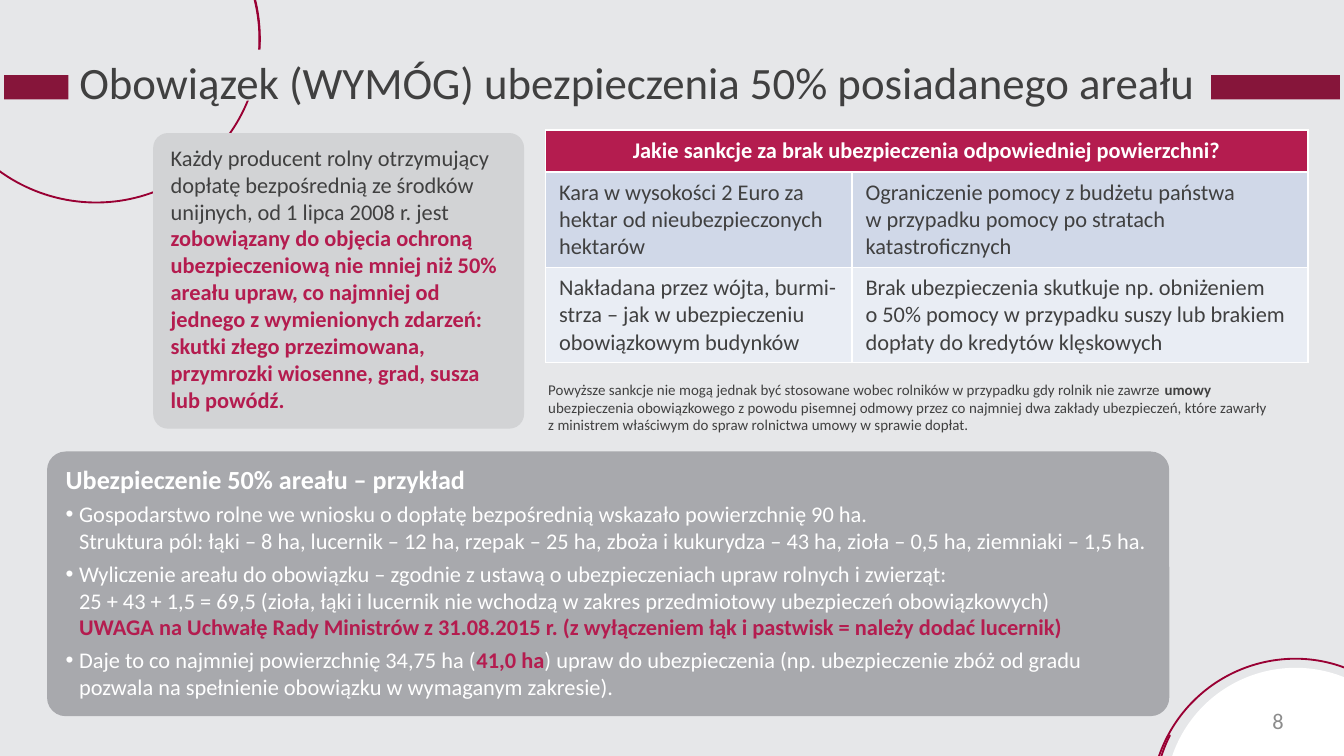
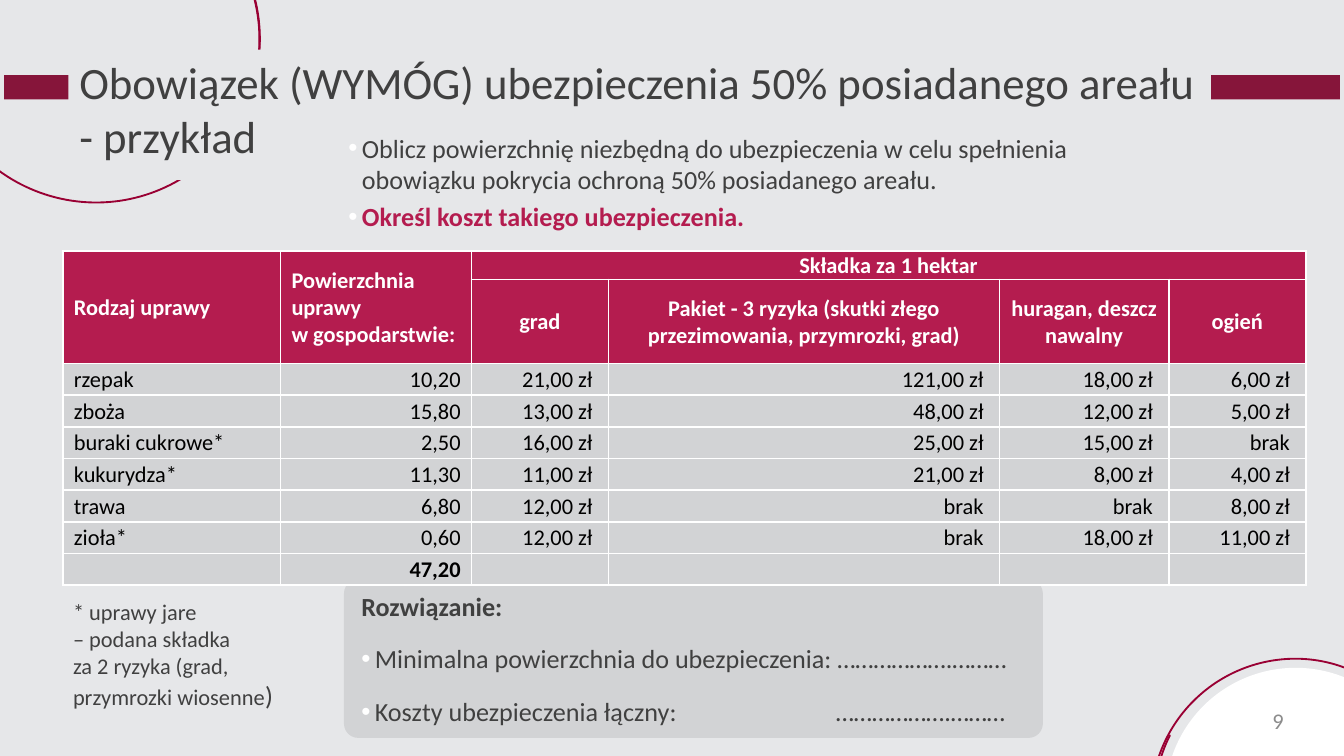
from copy import deepcopy
from dataclasses import dataclass

from lxml import etree
from pptx import Presentation
from pptx.dml.color import RGBColor
from pptx.enum.shapes import MSO_SHAPE
from pptx.enum.text import MSO_ANCHOR, MSO_AUTO_SIZE, PP_ALIGN
from pptx.oxml.ns import qn
from pptx.util import Pt

ARC, OVAL = MSO_SHAPE.BLOCK_ARC, MSO_SHAPE.OVAL
RECT, ROUND = MSO_SHAPE.RECTANGLE, MSO_SHAPE.ROUNDED_RECTANGLE
LEFT, MID, RIGHT = PP_ALIGN.LEFT, PP_ALIGN.CENTER, PP_ALIGN.RIGHT
TOP, CENTRE = MSO_ANCHOR.TOP, MSO_ANCHOR.MIDDLE
GROW = MSO_AUTO_SIZE.SHAPE_TO_FIT_TEXT

FONT = "Calibri"
PAPER, WHITE, BLACK = "E6E7E9", "FFFFFF", "000000"
WINE, RING, ROSE = "86153A", "990033", "B41C4F"
INK, PALE, GREY, DIM = "404040", "D2D3D5", "A8A9AD", "8C8C8C"
BLUE, ICE = "D0D8E8", "E9EDF4"
PAD = (7.2, 3.6, 7.2, 3.6)
TITLE = "Obowiązek (WYMÓG) ubezpieczenia 50% posiadanego areału"


@dataclass
class Bit:
    """A piece of text in one style; line breaks are newlines."""
    text: str
    size: float = 12
    color: str = INK
    bold: bool = False


@dataclass
class Para:
    bits: list
    dot: bool = False
    align: PP_ALIGN = LEFT
    before: float = 3
    lead: float = 1
    tab: float = 0


@dataclass
class Box:
    x: float
    y: float
    w: float
    h: float
    paras: list
    kind: MSO_SHAPE = ROUND
    fill: str = ""
    curve: float = 0.05
    pad: tuple = PAD
    anchor: MSO_ANCHOR = TOP
    grow: bool = False


@dataclass
class Deco:
    """A part of the shared backdrop; sweep is the arc's start in degrees."""
    kind: MSO_SHAPE
    x: float
    y: float
    w: float
    h: float
    fill: str = WINE
    turn: float = 0
    sweep: float = 0


@dataclass
class Cell:
    para: Para
    fill: str
    pad: tuple = PAD
    anchor: MSO_ANCHOR = TOP


DECOS = [
    Deco(ARC, -36.7, -67, 175.7, 176.4, turn=12.3, sweep=170.46),
    Deco(ARC, -36.7, -67.7, 175.7, 176.4, turn=132.3, sweep=155.79),
    Deco(RECT, 2.2, 40.3, 715.7, 13),
    Deco(ARC, 618.5, 354.2, 151.9, 148.3, turn=205.2, sweep=170.46),
    Deco(ARC, 616.3, 353.5, 151.9, 148.3, turn=325.2, sweep=163.48),
    Deco(OVAL, 624.2, 357.8, 139.7, 139.7, fill=WHITE, turn=7),
]


def rgb(code: str) -> RGBColor:
    return RGBColor.from_string(code)


def paint(fill, code: str) -> None:
    fill.solid()
    fill.fore_color.rgb = rgb(code)


def child(node, tag: str, **attrs):
    return etree.SubElement(node, qn(tag), attrs)


def tint(node, code: str) -> None:
    child(node, "a:srgbClr", val=code)


# Text

def style(font, bit: Bit) -> None:
    font.name, font.size, font.bold = FONT, Pt(bit.size), bit.bold
    font.color.rgb = rgb(bit.color)


def write(par, spec: Para) -> None:
    par.alignment = spec.align
    par.space_before = Pt(spec.before)
    par.line_spacing = spec.lead
    for bit in spec.bits:
        for num, line in enumerate(bit.text.split("\n")):
            if num:
                par.add_line_break()
                mark = par._p.findall(qn("a:br"))[-1]
                mark.append(deepcopy(par.runs[-1]._r.rPr))
            if line:
                run = par.add_run()
                run.text = line
                style(run.font, bit)
    props = par._p.get_or_add_pPr()
    if not par.runs:
        child(par._p, "a:endParaRPr", sz="1200")
    if spec.dot:
        props.set("marL", str(Pt(7.2)))
        props.set("indent", str(Pt(-7.2)))
        tint(child(props, "a:buClr"), WHITE)
        child(props, "a:buFont", typeface="Arial")
        child(props, "a:buChar", char="•")
    if spec.tab:
        tabs = child(props, "a:tabLst")
        child(tabs, "a:tab", pos=str(Pt(spec.tab)), algn="l")


def margins(item, pad: tuple) -> None:
    (item.margin_left, item.margin_top,
     item.margin_right, item.margin_bottom) = map(Pt, pad)


# Shapes

def place(slide, item):
    spot = map(Pt, (item.x, item.y, item.w, item.h))
    shape = slide.shapes.add_shape(item.kind, *spot)
    shape.shadow.inherit = False
    shape.line.fill.background()
    if item.fill:
        paint(shape.fill, item.fill)
    else:
        shape.fill.background()
    return shape


def deco(slide, item: Deco) -> None:
    shape = place(slide, item)
    shape.rotation = item.turn
    if item.kind == ARC:
        for num, deg in enumerate((item.sweep, 1.76, 0)):
            shape.adjustments[num] = deg * 0.6
        paint(shape.line.fill, RING)
        shape.line.width = Pt(1)


def box(slide, item: Box) -> None:
    shape = place(slide, item)
    if item.kind == ROUND:
        shape.adjustments[0] = item.curve
    frame = shape.text_frame
    frame.word_wrap = True
    frame.vertical_anchor = item.anchor
    margins(frame, item.pad)
    for num, spec in enumerate(item.paras):
        write(frame.add_paragraph() if num else frame.paragraphs[0], spec)
    if item.grow:
        frame.auto_size = GROW


def grid(slide, x: float, y: float, cols: list, rows: list,
         cells: dict, spans: list) -> None:
    spot = map(Pt, (x, y, sum(cols), sum(rows)))
    table = slide.shapes.add_table(len(rows), len(cols), *spot).table
    table.first_row = table.horz_banding = False
    for col, size in zip(table.columns, cols):
        col.width = Pt(size)
    for row, size in zip(table.rows, rows):
        row.height = Pt(size)
    for (r, c), spec in cells.items():
        cell = table.cell(r, c)
        margins(cell, spec.pad)
        cell.vertical_anchor = spec.anchor
        props = cell._tc.get_or_add_tcPr()
        for side in "LRTB":
            edge = child(props, f"a:ln{side}", w=str(Pt(1)))
            tint(child(edge, "a:solidFill"), WHITE)
        paint(cell.fill, spec.fill)
        write(cell.text_frame.paragraphs[0], spec.para)
    for first, last in spans:
        table.cell(*first).merge(table.cell(*last))


def start(deck, page: int, title: str, high: float):
    """Add a slide with backdrop, page number and title."""
    slide = deck.slides.add_slide(deck.slide_layouts[6])
    paint(slide.background.fill, PAPER)
    for item in DECOS:
        deco(slide, item)
    label = Para([Bit(str(page), 12, DIM)], align=RIGHT, before=0)
    box(slide, Box(595.4, 375.1, 99.4, 21.6, [label], RECT, anchor=CENTRE))
    head = Para([Bit(title, 24)], before=0)
    box(slide, Box(36.7, 26.6, 612, high, [head], RECT, PAPER,
                   pad=(5.8, 2.9, 5.8, 8.6), grow=True))
    return slide


# Slide 8: the duty and its sanctions

def duty(deck) -> None:
    slide = start(deck, 8, TITLE, 27.4)
    box(slide, Box(25.2, 241.9, 601.2, 141.8, [
        Para([Bit("Ubezpieczenie 50% areału – przykład", 14, WHITE, True)]),
        Para([Bit("Gospodarstwo rolne we wniosku o dopłatę bezpośrednią wskazało powierzchnię 90 ha. \n"
                  "Struktura pól: łąki – 8 ha, lucernik – 12 ha, rzepak – 25 ha, zboża i kukurydza – 43 ha, "
                  "zioła – 0,5 ha, ziemniaki – 1,5 ha.", 12, WHITE)], True),
        Para([Bit("Wyliczenie areału do obowiązku – zgodnie z ustawą o ubezpieczeniach upraw rolnych i zwierząt: \n"
                  "25 + 43 + 1,5 = 69,5 (zioła, łąki i lucernik nie wchodzą w zakres przedmiotowy "
                  "ubezpieczeń obowiązkowych) \n", 12, WHITE),
              Bit("UWAGA na Uchwałę Rady Ministrów z 31.08.2015 r. "
                  "(z wyłączeniem łąk i pastwisk = należy dodać lucernik)", 12, ROSE, True)], True),
        Para([Bit("Daje to co najmniej powierzchnię 34,75 ha (", 12, WHITE),
              Bit("41,0 ha", 12, ROSE, True),
              Bit(") upraw do ubezpieczenia (np. ubezpieczenie zbóż od gradu "
                  "pozwala na spełnienie obowiązku w wymaganym zakresie).", 12, WHITE)], True),
    ], fill=GREY, curve=0.07))
    box(slide, Box(82.1, 71.3, 198.7, 158.4, [Para([
        Bit("Każdy producent rolny otrzymujący dopłatę bezpośrednią ze środków unijnych, "
            "od 1 lipca 2008 r. jest "),
        Bit("zobowiązany do objęcia ochroną ubezpieczeniową nie mniej niż 50% areału upraw, "
            "co najmniej od jednego z wymienionych zdarzeń: skutki złego przezimowana, "
            "przymrozki wiosenne, grad, susza lub powódź.", 12, ROSE, True)])], fill=PALE))

    texts = [
        ["Kara w wysokości 2 Euro za hektar od nieubezpieczonych hektarów",
         "Ograniczenie pomocy z budżetu państwa \nw przypadku pomocy po stratach katastroficznych"],
        ["Nakładana przez wójta, burmi-strza – jak w ubezpieczeniu obowiązkowym budynków",
         "Brak ubezpieczenia skutkuje np. obniżeniem \n"
         "o 50% pomocy w przypadku suszy lub brakiem dopłaty do kredytów klęskowych"],
    ]
    head = Bit("Jakie sankcje za brak ubezpieczenia odpowiedniej powierzchni?", 12, WHITE, True)
    cells = {(0, 0): Cell(Para([head], align=MID, before=0), ROSE)}
    for r, (row, fill) in enumerate(zip(texts, (BLUE, ICE)), 1):
        for c, text in enumerate(row):
            cells[r, c] = Cell(Para([Bit(text)], before=0), fill)
    grid(slide, 292.3, 69.8, [164.2, 244.1], [22.5, 51, 51], cells, [((0, 0), (0, 1))])

    box(slide, Box(286.6, 200.2, 414, 36, [Para([
        Bit("Powyższe sankcje nie mogą jednak być stosowane wobec rolników "
            "w przypadku gdy rolnik nie zawrze ", 8),
        Bit("umowy", 8, bold=True),
        Bit(" ubezpieczenia obowiązkowego z powodu pisemnej odmowy przez co najmniej "
            "dwa zakłady ubezpieczeń, które zawarły \n"
            "z ministrem właściwym do spraw rolnictwa umowy w sprawie dopłat.", 8),
    ], before=0)], RECT, grow=True))


# Slide 9: the exercise

def drill(deck) -> None:
    slide = start(deck, 9, TITLE + "\n- przykład", 69.8)
    dots = "……………….………"
    box(slide, Box(184.3, 310.3, 374.4, 85, [
        Para([Bit("Rozwiązanie:", 14, bold=True)]),
        Para([Bit(f"Minimalna powierzchnia do ubezpieczenia: {dots}", 14)], True, lead=1.5),
        Para([Bit(f"Koszty ubezpieczenia łączny: \t{dots}", 14)], True, lead=1.5, tab=254.2),
    ], fill=PALE, curve=0.09))
    box(slide, Box(178.6, 66.2, 414, 67.7, [
        Para([Bit("Oblicz powierzchnię niezbędną do ubezpieczenia w celu spełnienia "
                  "obowiązku pokrycia ochroną 50% posiadanego areału.", 14)], True),
        Para([Bit("Określ koszt takiego ubezpieczenia.", 14, ROSE, True)], True),
    ]))

    heads = {
        (0, 0): "Rodzaj uprawy",
        (0, 1): "Powierzchnia uprawy \nw gospodarstwie:",
        (0, 2): "Składka za 1 hektar",
        (1, 2): "grad",
        (1, 3): "Pakiet - 3 ryzyka (skutki złego przezimowania, przymrozki, grad)",
        (1, 4): "huragan, deszcz nawalny",
        (1, 5): "ogień",
    }
    crops = [
        ("rzepak", "10,20", "21,00 zł", "121,00 zł", "18,00 zł", "6,00 zł"),
        ("zboża", "15,80", "13,00 zł", "48,00 zł", "12,00 zł", "5,00 zł"),
        ("buraki cukrowe*", "2,50", "16,00 zł", "25,00 zł", "15,00 zł", "brak"),
        ("kukurydza*", "11,30", "11,00 zł", "21,00 zł", "8,00 zł", "4,00 zł"),
        ("trawa", "6,80", "12,00 zł", "brak", "brak", "8,00 zł"),
        ("zioła*", "0,60", "12,00 zł", "brak", "18,00 zł", "11,00 zł"),
        ("", "47,20", "", "", "", ""),
    ]
    slim = (5.8, 0.7, 5.8, 0)
    cells = {}
    for spot, text in heads.items():
        para = Para([Bit(text, 12, WHITE, True)], align=MID if spot[1] > 1 else LEFT, before=0)
        cells[spot] = Cell(para, ROSE, slim, CENTRE)
    for r, crop in enumerate(crops, 2):
        for c, text in enumerate(crop):
            text += " " if c > 1 and text else ""
            bit = Bit(text, 12, BLACK, not crop[0])
            para = Para([bit], align=RIGHT if c else LEFT, before=0)
            cells[r, c] = Cell(para, PALE, slim, CENTRE)
    grid(slide, 33.8, 134.6, [116.6, 102.2, 73.4, 209.5, 90.7, 73.4],
         [15, 45] + [17] * len(crops), cells,
         [((0, 0), (1, 0)), ((0, 1), (1, 1)), ((0, 2), (0, 5))])

    box(slide, Box(31, 316, 124.6, 73.4, [Para([
        Bit("* uprawy jare \n– podana składka \nza 2 ryzyka (grad, przymrozki wiosenne"),
        Bit(")", 14)])]))


def main() -> None:
    deck = Presentation()
    deck.slide_width, deck.slide_height = Pt(720), Pt(405)
    duty(deck)
    drill(deck)
    deck.save("out.pptx")


if __name__ == "__main__":
    main()
